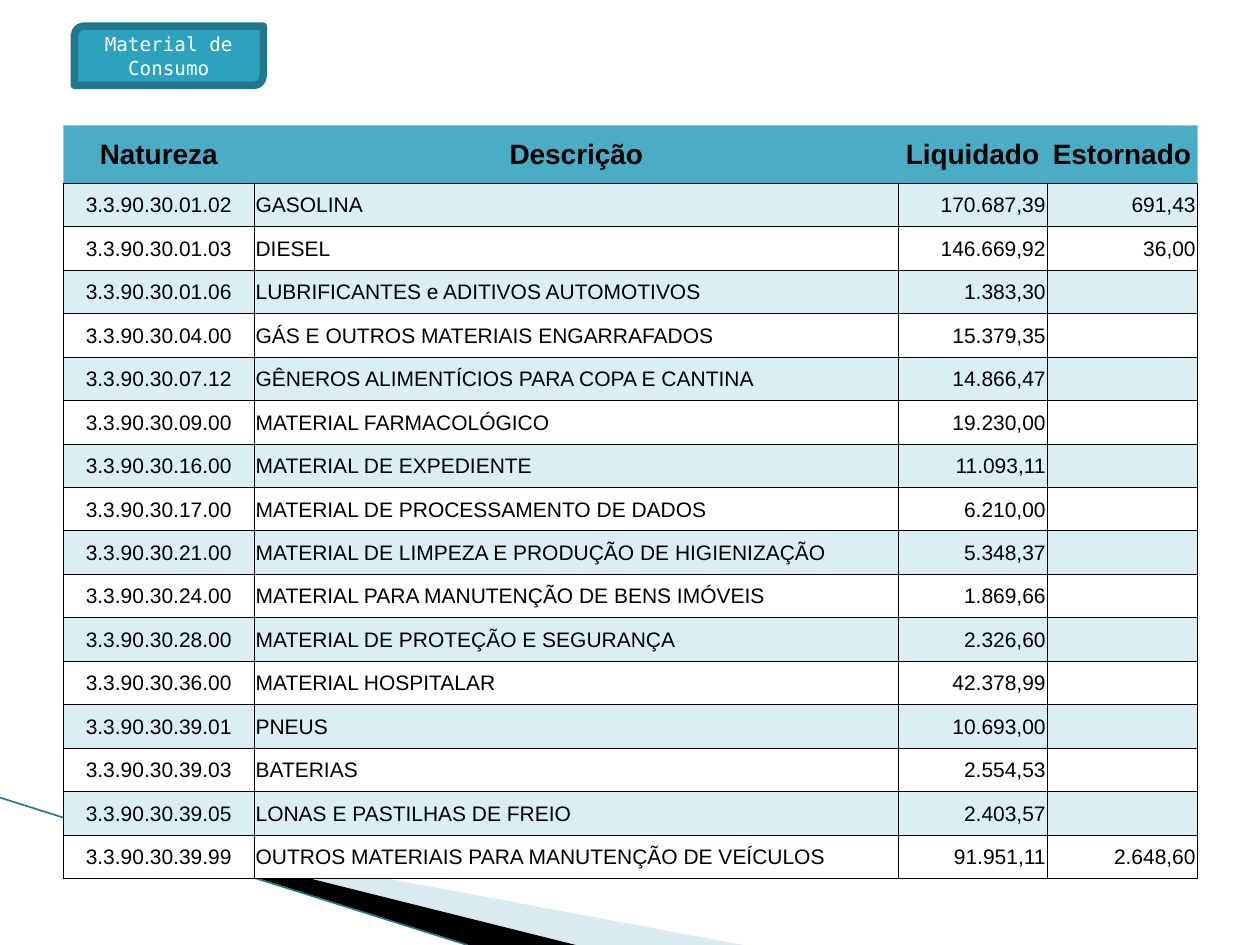
from lxml.etree import SubElement as Sub
from pptx import Presentation
from pptx.dml.color import RGBColor as Rgb
from pptx.enum.shapes import MSO_CONNECTOR as Link, MSO_SHAPE as Kind
from pptx.enum.text import MSO_ANCHOR as Anchor, PP_ALIGN as Align
from pptx.oxml.ns import qn
from pptx.util import Pt

BLACK = Rgb(0x00, 0x00, 0x00)
WHITE = Rgb(0xFF, 0xFF, 0xFF)
TEAL = Rgb(0x2D, 0xA2, 0xBF)
DARK = Rgb(0x21, 0x78, 0x8D)
MIST = Rgb(0xA0, 0xCB, 0xDC)
HEAD = Rgb(0x4B, 0xAC, 0xC6)
EDGE = Rgb(0x92, 0xCD, 0xDC)
BAND = Rgb(0xDA, 0xEE, 0xF3)

COLS = [
    ("Natureza", 109.4, Align.CENTER),
    ("Descrição", 367.9, Align.LEFT),
    ("Liquidado", 85, Align.RIGHT),
    ("Estornado", 85.7, Align.RIGHT),
]
ROWS = [
    ("3.3.90.30.01.02", "GASOLINA", "170.687,39", "691,43"),
    ("3.3.90.30.01.03", "DIESEL", "146.669,92", "36,00"),
    ("3.3.90.30.01.06", "LUBRIFICANTES e ADITIVOS AUTOMOTIVOS", "1.383,30", ""),
    ("3.3.90.30.04.00", "GÁS E OUTROS MATERIAIS ENGARRAFADOS", "15.379,35", ""),
    ("3.3.90.30.07.12", "GÊNEROS ALIMENTÍCIOS PARA COPA E CANTINA", "14.866,47", ""),
    ("3.3.90.30.09.00", "MATERIAL FARMACOLÓGICO", "19.230,00", ""),
    ("3.3.90.30.16.00", "MATERIAL DE EXPEDIENTE", "11.093,11", ""),
    ("3.3.90.30.17.00", "MATERIAL DE PROCESSAMENTO DE DADOS", "6.210,00", ""),
    ("3.3.90.30.21.00", "MATERIAL DE LIMPEZA E PRODUÇÃO DE HIGIENIZAÇÃO", "5.348,37", ""),
    ("3.3.90.30.24.00", "MATERIAL PARA MANUTENÇÃO DE BENS IMÓVEIS", "1.869,66", ""),
    ("3.3.90.30.28.00", "MATERIAL DE PROTEÇÃO E SEGURANÇA", "2.326,60", ""),
    ("3.3.90.30.36.00", "MATERIAL HOSPITALAR", "42.378,99", ""),
    ("3.3.90.30.39.01", "PNEUS", "10.693,00", ""),
    ("3.3.90.30.39.03", "BATERIAS", "2.554,53", ""),
    ("3.3.90.30.39.05", "LONAS E PASTILHAS DE FREIO", "2.403,57", ""),
    ("3.3.90.30.39.99", "OUTROS MATERIAIS PARA MANUTENÇÃO DE VEÍCULOS", "91.951,11", "2.648,60"),
]


def style(para, name, size, color, align, bold=False):
    para.alignment = align
    font = para.font
    font.name, font.size, font.bold = name, Pt(size), bold
    font.color.rgb = color


def add_wedge(slide, left, top, points, color, alpha=100):
    spots = [(Pt(left + x), Pt(top + y)) for x, y in points]
    pen = slide.shapes.build_freeform(*spots[0], scale=1.0)
    pen.add_line_segments(spots[1:], close=True)
    wedge = pen.convert_to_shape()
    wedge.shadow.inherit = False
    wedge.fill.solid()
    wedge.fill.fore_color.rgb = color
    wedge.line.fill.background()
    if alpha < 100:
        tint = wedge.fill._xPr.find(".//" + qn("a:srgbClr"))
        Sub(tint, qn("a:alpha"), val=str(alpha * 1000))


def add_swoosh(slide, left, top, width, height):
    base = height
    add_wedge(slide, left, top, [(39.6, 12.4), (width, base), (328.3, base)], MIST, 40)
    add_wedge(slide, left, top, [(38.2, 11.5), (329, base), (267.8, base)], BLACK)
    line = slide.shapes.add_connector(
        Link.STRAIGHT, Pt(left), Pt(top), Pt(left + 267), Pt(top + base))
    line.line.color.rgb = DARK
    line.line.width = Pt(0.95)
    Sub(line._element.spPr, qn("a:effectLst"))


def add_label(slide, left, top, width, height, text):
    label = slide.shapes.add_shape(
        Kind.ROUND_2_DIAG_RECTANGLE, Pt(left), Pt(top), Pt(width), Pt(height))
    label.shadow.inherit = False
    label.fill.solid()
    label.fill.fore_color.rgb = TEAL
    label.line.color.rgb = DARK
    label.line.width = Pt(4.33)
    Sub(label.line._ln, qn("a:round"))
    frame = label.text_frame
    frame.word_wrap = True
    frame.vertical_anchor = Anchor.MIDDLE
    frame.text = text
    style(frame.paragraphs[0], "DejaVu Sans Mono", 11, WHITE, Align.CENTER)


def set_edges(cell, edges):
    props = cell._tc.get_or_add_tcPr()
    for side, color in edges.items():
        line = Sub(props, qn("a:ln" + side), w=str(Pt(0.5)))
        if color is None:
            Sub(line, qn("a:noFill"))
        else:
            fill = Sub(line, qn("a:solidFill"))
            Sub(fill, qn("a:srgbClr"), val=str(color))


def fill_cell(cell, text, color, edges, size, align, bold):
    set_edges(cell, edges)
    cell.fill.solid()
    cell.fill.fore_color.rgb = color
    cell.margin_left = cell.margin_right = cell.margin_top = Pt(0.7)
    cell.margin_bottom = 0
    cell.vertical_anchor = Anchor.MIDDLE
    cell.text = text
    style(cell.text_frame.paragraphs[0], "Arial", size, BLACK, align, bold)


def add_grid(slide, left, top, width, height):
    head = 33.1
    step = (height - head) / len(ROWS)
    grid = slide.shapes.add_table(
        len(ROWS) + 1, len(COLS), Pt(left), Pt(top), Pt(width), Pt(height)).table
    grid.first_row = grid.horz_banding = False
    for row in grid.rows:
        row.height = Pt(step)
    grid.rows[0].height = Pt(head)
    last = len(COLS) - 1
    for c, (name, wide, align) in enumerate(COLS):
        grid.columns[c].width = Pt(wide)
        edges = {"L": None if c else EDGE, "R": EDGE if c == last else None,
                 "T": EDGE, "B": BLACK}
        fill_cell(grid.cell(0, c), name, HEAD, edges, 16, Align.CENTER, True)
        for r, row in enumerate(ROWS, 1):
            color = BAND if r % 2 else WHITE
            fill_cell(grid.cell(r, c), row[c], color,
                      dict.fromkeys("LRTB", BLACK), 12, align, False)


def main():
    deck = Presentation()
    deck.slide_width, deck.slide_height = Pt(720), Pt(540)
    slide = deck.slides.add_slide(deck.slide_layouts[6])
    add_swoosh(slide, 0, 455.8, 425, 84.2)
    add_label(slide, 42.5, 15, 108, 33.8, "Material de Consumo")
    add_grid(slide, 36, 71.6, 648, 430.8)
    deck.save("out.pptx")


if __name__ == "__main__":
    main()
